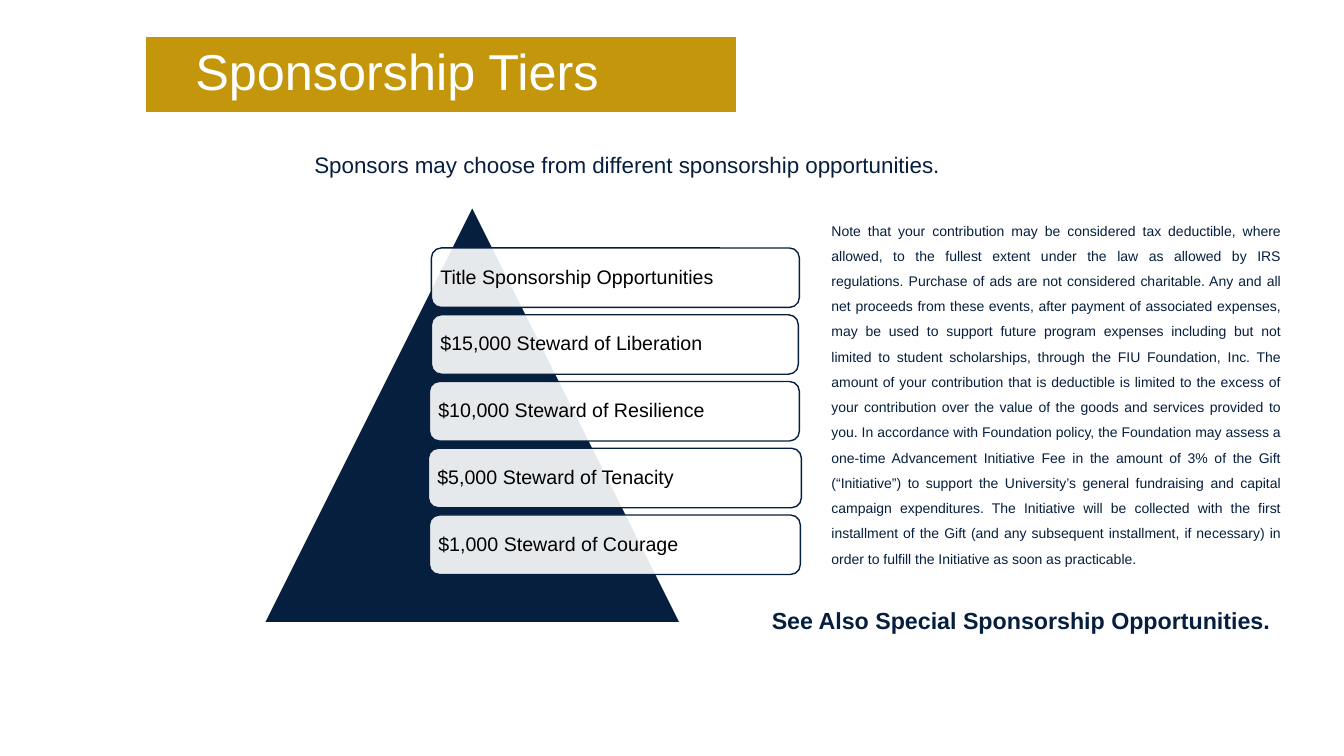
"""Build the sponsorship tiers slide."""
from typing import NamedTuple

from lxml import etree
from pptx import Presentation
from pptx.dml.color import RGBColor
from pptx.enum.shapes import MSO_SHAPE
from pptx.enum.text import MSO_ANCHOR, PP_ALIGN
from pptx.oxml.ns import qn
from pptx.util import Emu, Inches, Pt

RECT, TRIANGLE, ROUNDED = MSO_SHAPE.RECTANGLE, MSO_SHAPE.ISOSCELES_TRIANGLE, MSO_SHAPE.ROUNDED_RECTANGLE
TOP, MIDDLE = MSO_ANCHOR.TOP, MSO_ANCHOR.MIDDLE
LEFT, CENTER, JUSTIFY = PP_ALIGN.LEFT, PP_ALIGN.CENTER, PP_ALIGN.JUSTIFY

COLORS = {"gold": "C4960B", "navy": "061F3E", "ink": "071F3E", "white": "FFFFFF", "black": "000000"}
FONT = "Arial"
WIDTH, HEIGHT = Inches(13.333), Inches(7.5)
TIER_TOP, TIER_PITCH, TIER_HEIGHT = 32.8, 8.83, 7.87

NOTE_SENTENCES = (
    "Note that your contribution may be considered tax deductible, where allowed, to the fullest "
    "extent under the law as allowed by IRS regulations.",
    "Purchase of ads are not considered charitable.",
    "Any and all net proceeds from these events, after payment of associated expenses, "
    "may be used to support future program expenses including but not limited to student "
    "scholarships, through the FIU Foundation, Inc.",
    "The amount of your contribution that is deductible is limited to the excess of your "
    "contribution over the value of the goods and services provided to you.",
    "In accordance with Foundation policy, the Foundation may assess a one-time Advancement "
    "Initiative Fee in the amount of 3% of the Gift (“Initiative”) to support the University’s "
    "general fundraising and capital campaign expenditures.",
    "The Initiative will be collected with the first installment of the Gift (and any subsequent "
    "installment, if necessary) in order to fulfill the Initiative as soon as practicable.",
)


class Box(NamedTuple):
    """Place and size in percent of the slide's width and height."""
    left: float
    top: float
    width: float
    height: float

    def emu(self) -> tuple:
        """Return the four lengths in EMU."""
        sides = zip(self, (WIDTH, HEIGHT, WIDTH, HEIGHT))
        return tuple(Emu(round(share * side / 100)) for share, side in sides)


class Tier(NamedTuple):
    """One sponsorship level with its left edge and width in percent."""
    label: str
    left: float
    width: float


TIERS = (
    Tier("Title Sponsorship Opportunities", 32.1, 27.38),
    Tier("$15,000 Steward of Liberation", 32.1, 27.3),
    Tier("$10,000 Steward of Resilience", 31.95, 27.53),
    Tier("$5,000 Steward of Tenacity", 31.88, 27.75),
    Tier("$1,000 Steward of Courage", 31.95, 27.6),
)


def rgb(name: str) -> RGBColor:
    """Look up a named colour."""
    return RGBColor.from_string(COLORS[name])


def write(sp, text: str, *, size: float, color: str, bold: bool = False,
          align=LEFT, anchor=TOP, spacing: float = 0.9) -> None:
    """Put one formatted paragraph into a shape."""
    tf = sp.text_frame
    tf.word_wrap = True
    tf.vertical_anchor = anchor
    p = tf.paragraphs[0]
    p.alignment, p.line_spacing = align, spacing
    r = p.add_run()
    r.text = text
    r.font.name, r.font.size, r.font.bold = FONT, Pt(size), bold
    r.font.color.rgb = rgb(color)


def add_text(s, box: Box, text: str, **style) -> None:
    """Add a text box holding one paragraph."""
    write(s.shapes.add_textbox(*box.emu()), text, **style)


def add_block(s, kind, box: Box, fill: str, line: str = ""):
    """Add a filled preset shape, outlined if a line colour is given."""
    sp = s.shapes.add_shape(kind, *box.emu())
    sp.shadow.inherit = False
    sp.fill.solid()
    sp.fill.fore_color.rgb = rgb(fill)
    if line:
        sp.line.color.rgb = rgb(line)
        sp.line.width = Pt(1)
    else:
        sp.line.fill.background()
    return sp


def add_tier(s, row: int, tier: Tier) -> None:
    """Add one translucent tier label in its row."""
    box = Box(tier.left, TIER_TOP + row * TIER_PITCH, tier.width, TIER_HEIGHT)
    sp = add_block(s, ROUNDED, box, "white", "ink")
    fill = sp.element.spPr.find(qn("a:solidFill"))
    etree.SubElement(fill[0], qn("a:alpha"), val="90000")
    tf = sp.text_frame
    tf.margin_left = tf.margin_right = tf.margin_top = tf.margin_bottom = Inches(0.06)
    write(sp, tier.label, size=14, color="black", anchor=MIDDLE)


def main() -> None:
    """Build and save the slide."""
    prs = Presentation()
    prs.slide_width, prs.slide_height = WIDTH, HEIGHT
    s = prs.slides.add_slide(prs.slide_layouts[6])
    add_block(s, RECT, Box(10.88, 4.93, 43.88, 9.87), "gold")
    add_text(s, Box(13.8, 2.53, 72.38, 14.67), "Sponsorship Tiers",
             size=36, color="white", anchor=MIDDLE)
    add_block(s, TRIANGLE, Box(19.65, 27.33, 30.98, 55.07), "navy", "white")
    for row, tier in enumerate(TIERS):
        add_tier(s, row, tier)
    add_text(s, Box(61.13, 27.6, 34.88, 48), " ".join(NOTE_SENTENCES),
             size=10, color="navy", align=JUSTIFY, spacing=1.5)
    add_text(s, Box(22.65, 17.6, 67.5, 6),
             "Sponsors may choose from different sponsorship opportunities.",
             size=16, color="ink", spacing=1.5)
    add_text(s, Box(54.75, 76.27, 42.38, 7.73), "See Also Special Sponsorship Opportunities.",
             size=16.6, color="ink", bold=True, align=CENTER, spacing=1.9)
    prs.save("out.pptx")


if __name__ == "__main__":
    main()
